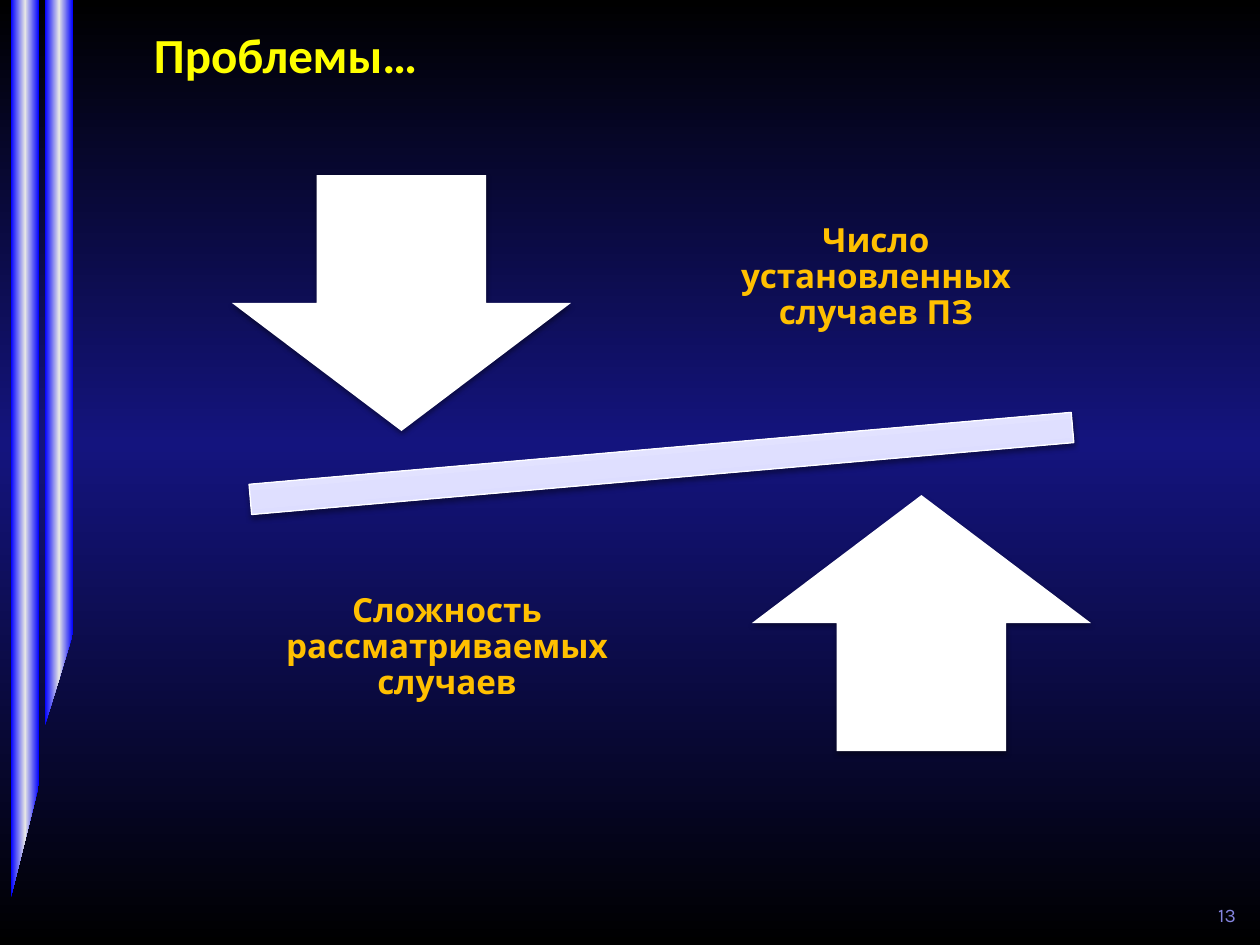
from lxml.etree import SubElement
from pptx import Presentation
from pptx.dml.color import RGBColor
from pptx.enum.shapes import MSO_SHAPE
from pptx.enum.text import MSO_ANCHOR, PP_ALIGN
from pptx.oxml.ns import qn
from pptx.util import Pt

PX = 914400 / 126
COLORS = {
    "black": "000000", "navy": "14147E", "blue": "0000FF", "silver": "E5E5E5",
    "title": "FFFF00", "label": "FFC000", "number": "8585E0", "white": "FFFFFF",
    "bar_low": "CECEFF", "bar_mid": "DBDBFF", "bar_high": "F1F1FF",
}


def emu(*lengths):
    return [round(n * PX) for n in lengths]


def rgb(name):
    return RGBColor.from_string(COLORS[name])


def set_gradient(fill, element, stops, angle):
    fill.gradient()
    grad = next(element.iter(qn("a:gradFill")))
    gs_list = grad.find(qn("a:gsLst"))
    for gs in list(gs_list):
        gs_list.remove(gs)
    for pos, color in stops:
        gs = SubElement(gs_list, qn("a:gs"), pos=str(pos * 1000))
        SubElement(gs, qn("a:srgbClr"), val=COLORS[color])
    grad.find(qn("a:lin")).set("ang", str(angle * 60000))


def add_shadow(sp):
    sp.shadow.inherit = False
    effects = sp._element.spPr.find(qn("a:effectLst"))
    shadow = SubElement(effects, qn("a:outerShdw"), blurRad=str(Pt(3.1)),
                        dist=str(Pt(1.6)), dir="5400000", rotWithShape="0")
    color = SubElement(shadow, qn("a:srgbClr"), val=COLORS["black"])
    SubElement(color, qn("a:alpha"), val="38000")


def write_text(sp, text, size, font, color, align, anchor, margins, bold=True):
    tf = sp.text_frame
    tf.word_wrap = True
    tf.vertical_anchor = anchor
    tf.margin_left, tf.margin_top, tf.margin_right, tf.margin_bottom = emu(*margins)
    p = tf.paragraphs[0]
    p.alignment = align
    r = p.add_run()
    r.text = text
    r.font.size = Pt(size)
    r.font.name = font
    r.font.bold = bold
    r.font.color.rgb = rgb(color)
    return p


def add_ribbon(s, x, y, w, side, tip):
    fb = s.shapes.build_freeform(x, y, scale=PX)
    fb.add_line_segments([(x + w, y), (x + w, y + side), (x, y + tip)], close=True)
    sp = fb.convert_to_shape()
    sp.shadow.inherit = False
    stops = [(0, "blue"), (50, "silver"), (100, "blue")]
    set_gradient(sp.fill, sp._element.spPr, stops, 0)
    sp.line.fill.background()


def add_title(s, x, y, w, h):
    title = s.shapes.title
    title.left, title.top, title.width, title.height = emu(x, y, w, h)
    write_text(title, "Проблемы…", 28, "Calibri", "title", PP_ALIGN.LEFT,
               MSO_ANCHOR.MIDDLE, (0, 0, 0, 0))


def add_arrow(s, kind, x, y):
    sp = s.shapes.add_shape(kind, *emu(x, y, 339, 256))
    sp.fill.solid()
    sp.fill.fore_color.rgb = rgb("white")
    sp.line.fill.background()
    add_shadow(sp)


def add_label(s, text, x, y):
    sp = s.shapes.add_textbox(*emu(x, y, 362, 268))
    p = write_text(sp, text, 19, "Karla", "label", PP_ALIGN.CENTER,
                   MSO_ANCHOR.MIDDLE, (19, 19, 19, 19))
    p.line_spacing = 0.9


def add_balance(s, x, y):
    bar = s.shapes.add_shape(MSO_SHAPE.MATH_MINUS, *emu(x, y + 255, 1123, 129))
    bar.rotation = 355
    stops = [(0, "bar_low"), (35, "bar_mid"), (100, "bar_high")]
    set_gradient(bar.fill, bar._element.spPr, stops, 270)
    bar.line.color.rgb = rgb("white")
    bar.line.width = Pt(0.75)
    add_shadow(bar)
    add_arrow(s, MSO_SHAPE.DOWN_ARROW, x + 132, y + 31)
    add_label(s, "Число установленных случаев ПЗ", x + 595, y)
    add_arrow(s, MSO_SHAPE.UP_ARROW, x + 652, y + 351)
    add_label(s, "Сложность рассматриваемых случаев", x + 166, y + 370)


def add_number(s, x, y, w, h):
    sp = s.shapes.add_textbox(*emu(x, y, w, h))
    write_text(sp, "13", 11, "Karla", "number", PP_ALIGN.RIGHT,
               MSO_ANCHOR.BOTTOM, (13, 6, 13, 6), bold=False)


def main():
    prs = Presentation()
    prs.slide_width, prs.slide_height = emu(1260, 945)
    s = prs.slides.add_slide(prs.slide_layouts[5])
    stops = [(0, "black"), (53, "navy"), (100, "black")]
    set_gradient(s.background.fill, s._element, stops, 270)
    add_ribbon(s, 45, 0, 28, 634, 725)
    add_ribbon(s, 11, 0, 28, 785, 897)
    add_title(s, 154, 20, 953, 67)
    add_balance(s, 100, 144)
    add_number(s, 871, 882, 378, 50)
    prs.save("out.pptx")


if __name__ == "__main__":
    main()
